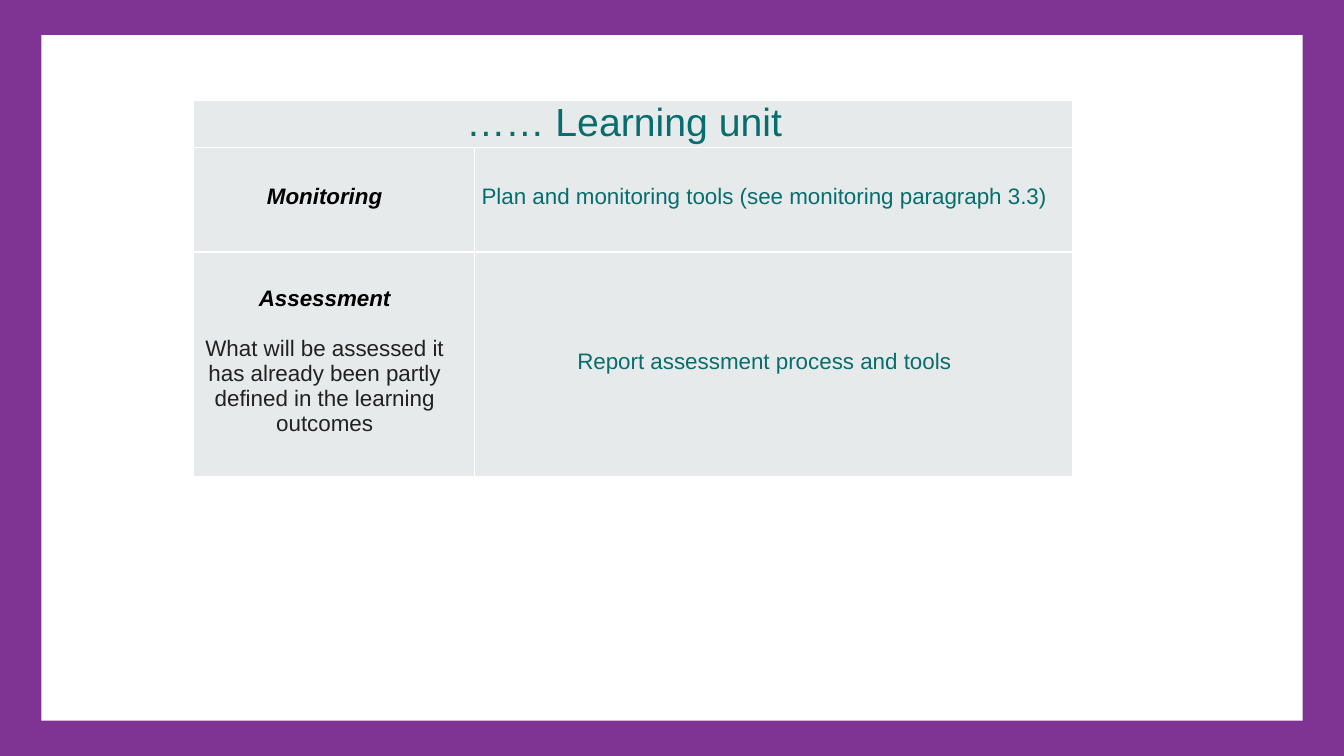
from dataclasses import dataclass

from lxml import etree
from pptx import Presentation, util as u
from pptx.dml.color import RGBColor
from pptx.enum import shapes, text
from pptx.oxml.ns import qn


@dataclass
class Theme:
    font: str = "Arial"
    frame: str = "7F3494"
    paper: str = "FFFFFF"
    cell: str = "E6EAEA"
    teal: str = "086D6E"
    label: str = "000000"
    body: str = "212121"
    heading_size: int = 28
    text_size: int = 16
    border_width: int = 1


theme = Theme()


def add_panel(slide, left, top, width, height, color):
    panel = slide.shapes.add_shape(
        shapes.MSO_SHAPE.RECTANGLE, left, top, width, height)
    panel.shadow.inherit = False
    panel.fill.solid()
    panel.fill.fore_color.rgb = RGBColor.from_string(color)
    panel.line.fill.background()


def add_borders(cell):
    properties = cell._tc.get_or_add_tcPr()
    for position, side in enumerate(("lnL", "lnR", "lnT", "lnB")):
        line = etree.Element(qn(f"a:{side}"), w=str(u.Pt(theme.border_width)))
        fill = etree.SubElement(line, qn("a:solidFill"))
        etree.SubElement(fill, qn("a:srgbClr"), val=theme.paper)
        properties.insert(position, line)


presentation = Presentation()
presentation.slide_width = u.Inches(13.33)
presentation.slide_height = u.Inches(7.5)
slide_width, slide_height = presentation.slide_width, presentation.slide_height
blank_layout = presentation.slide_layouts[6]
slide = presentation.slides.add_slide(blank_layout)

# Purple frame around a white page
frame_x, frame_y = u.Inches(0.41), u.Inches(0.35)
add_panel(slide, 0, 0, slide_width, slide_height, theme.frame)
add_panel(slide, frame_x, frame_y, slide_width - 2 * frame_x,
          slide_height - 2 * frame_y, theme.paper)

# Learning unit table
column_widths = [2.79, 5.93]
row_heights = [0.46, 1.04, 2.23]
table = slide.shapes.add_table(
    len(row_heights), len(column_widths), u.Inches(1.92), u.Inches(1),
    u.Inches(sum(column_widths)), u.Inches(sum(row_heights))).table
for column, width in zip(table.columns, column_widths):
    column.width = u.Inches(width)
for row, height in zip(table.rows, row_heights):
    row.height = u.Inches(height)
table.cell(0, 0).merge(table.cell(0, 1))

# Each paragraph: wording, colour, bold italic
rows = [
    [[("…… Learning unit", theme.teal, False)], []],
    [[("Monitoring", theme.label, True)],
     [("Plan and monitoring tools (see monitoring paragraph 3.3)",
       theme.teal, False)]],
    [[("Assessment", theme.label, True),
      ("What will be assessed it has already been partly defined "
       "in the learning outcomes", theme.body, False)],
     [("Report assessment process and tools", theme.teal, False)]],
]
heading_margins = (0.02, 0, 0.2, 0.02)
body_margins = (0.06, 0.01, 0.25, 0.07)

for row_index, row in enumerate(rows):
    is_heading = row_index == 0
    margins = heading_margins if is_heading else body_margins
    size = theme.heading_size if is_heading else theme.text_size
    for column_index, paragraphs in enumerate(row):
        cell = table.cell(row_index, column_index)
        cell.fill.solid()
        cell.fill.fore_color.rgb = RGBColor.from_string(theme.cell)
        add_borders(cell)
        cell.vertical_anchor = text.MSO_ANCHOR.MIDDLE
        (cell.margin_left, cell.margin_top,
         cell.margin_right, cell.margin_bottom) = map(u.Inches, margins)
        if not paragraphs:
            continue
        cell.text_frame.text = "\n".join(words for words, _, _ in paragraphs)
        for index, paragraph in enumerate(cell.text_frame.paragraphs):
            _, color, emphasized = paragraphs[index]
            paragraph.alignment = text.PP_ALIGN.CENTER
            paragraph.space_before = u.Pt(18 if index else 0)
            font = paragraph.runs[0].font
            font.name = theme.font
            font.size = u.Pt(size)
            font.bold = font.italic = emphasized
            font.color.rgb = RGBColor.from_string(color)

presentation.save("out.pptx")
